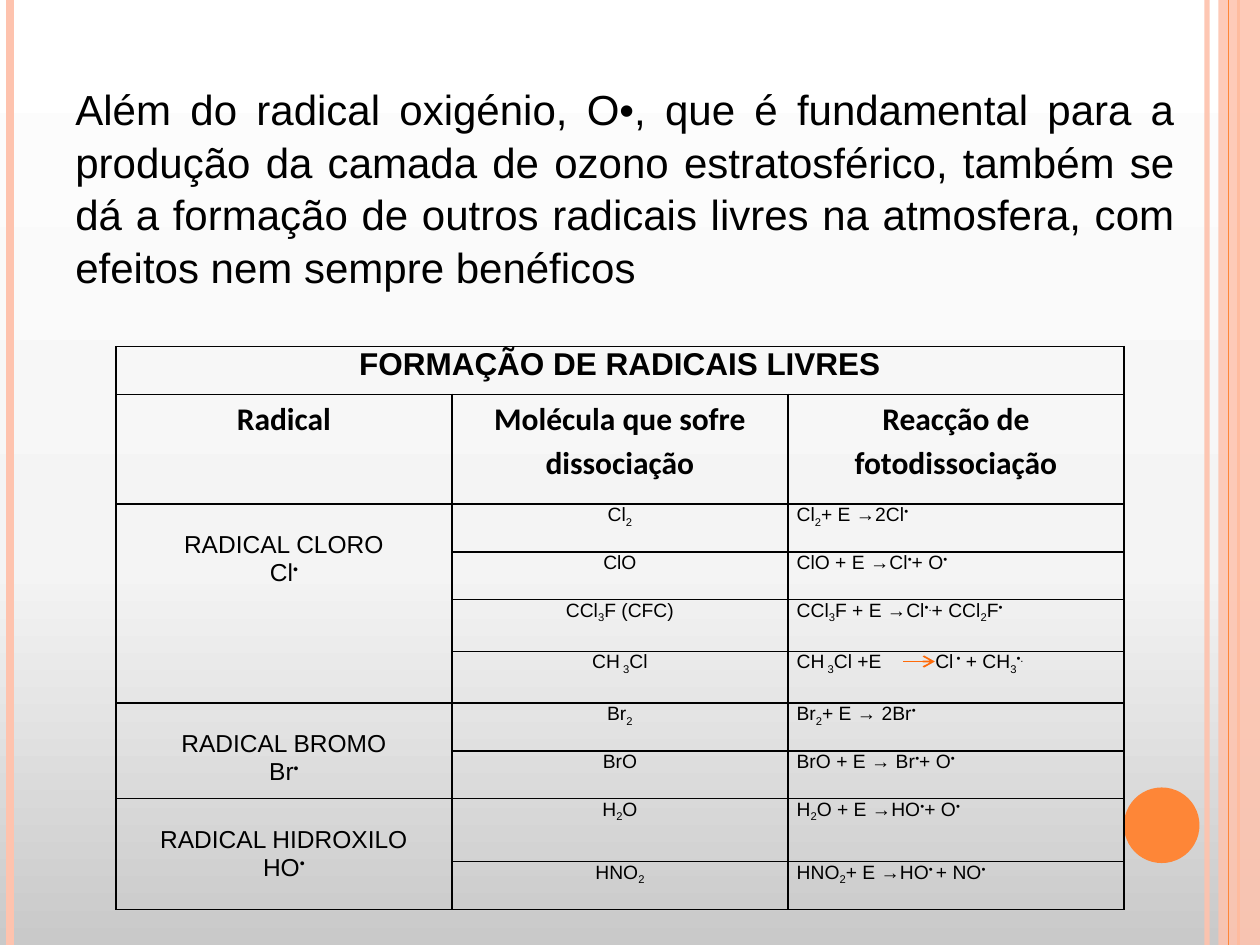
import copy
import dataclasses

import lxml.etree
import pptx
import pptx.dml.color
import pptx.enum.shapes
import pptx.enum.text
import pptx.oxml
import pptx.oxml.ns
import pptx.util

Inches = pptx.util.Inches
Align = pptx.enum.text.PP_ALIGN
Shape = pptx.enum.shapes.MSO_SHAPE
qn = pptx.oxml.ns.qn


@dataclasses.dataclass(frozen=True)
class Theme:
    ink: str = "000000"
    accent: str = "FE8637"
    blush: str = "FEC3AE"
    arrow: str = "FF6B0A"
    backdrop: tuple = ((0, "C9C9C9"), (0.4, "F4F4F4"), (1, "FFFFFF"))
    font: str = "Arial"
    heading_font: str = "Calibri"
    intro_size: int = 24
    heading_size: int = 18
    label_size: int = 14
    formula_size: int = 11


INTRO = (
    "Além do radical oxigénio, O•, que é fundamental para a produção da camada de ozono "
    "estratosférico, também se dá a formação de outros radicais livres na atmosfera, "
    "com efeitos nem sempre benéficos"
)
TITLE = "FORMAÇÃO DE RADICAIS LIVRES"
HEADINGS = ("Radical", "Molécula que sofre dissociação", "Reacção de fotodissociação")
RADICALS = (
    (("RADICAL CLORO", "Cl|^•"), (
        ("Cl|_2", "Cl|_2|+ E →2Cl|^•"),
        ("ClO", "ClO + E →Cl|^•|+ O|^•"),
        ("CCl|_3|F (CFC)", "CCl|_3|F + E →Cl|^•.|+ CCl|_2|F|^•"),
        ("CH|_ 3|Cl", "CH|_ 3|Cl +E\tCl|^ •| + CH|_3|^•."),
    )),
    (("RADICAL BROMO", "Br|^•"), (
        ("Br|_2", "Br|_2|+ E → 2Br|^•"),
        ("BrO", "BrO + E → Br|^•|+ O|^•"),
    )),
    (("RADICAL HIDROXILO", "HO|^•"), (
        ("H|_2|O", "H|_2|O + E →HO|^•|+ O|^•"),
        ("HNO|_2", "HNO|_2|+ E →HO|^• |+ NO|^•"),
    )),
)
ROW_HEIGHTS = (0.38, 0.87, 0.38, 0.38, 0.41, 0.41, 0.38, 0.38, 0.5, 0.38)
BASELINES = {"_": "-25000", "^": "30000"}


class SlideBuilder:
    """Draws styled elements on the current page."""

    def __init__(self, page, theme):
        self.page = page
        self.theme = theme

    def apply(self, target, values):
        for name, value in values.items():
            setattr(target, name, value)

    def rgb(self, colour):
        return pptx.dml.color.RGBColor.from_string(colour)

    def fade(self, element, percent):
        colour = element.find(".//" + qn("a:srgbClr"))
        lxml.etree.SubElement(colour, qn("a:alpha"), val=str(percent * 1000))

    def background(self):
        fill = self.page.background.fill
        fill.gradient()
        fill.gradient_angle = 90
        stops = self.page.element.find(".//" + qn("a:gsLst"))
        stops.append(copy.deepcopy(stops[0]))
        for stop, (position, colour) in zip(fill.gradient_stops, self.theme.backdrop):
            stop.position = position
            stop.color.rgb = self.rgb(colour)

    def line(self, start, end, colour, width, opacity=100, arrow=False):
        points = [Inches(value) for value in (*start, *end)]
        line = self.page.shapes.add_connector(pptx.enum.shapes.MSO_CONNECTOR.STRAIGHT, *points)
        line.line.color.rgb = self.rgb(colour)
        line.line.width = pptx.util.Pt(width)
        properties = line.element.spPr
        lxml.etree.SubElement(properties, qn("a:effectLst"))
        if opacity < 100:
            self.fade(properties, opacity)
        if arrow:
            lxml.etree.SubElement(properties.find(qn("a:ln")), qn("a:tailEnd"), type="arrow")

    def shape(self, kind, area, colour, opacity=100):
        shape = self.page.shapes.add_shape(kind, *map(Inches, area))
        shape.shadow.inherit = False
        shape.fill.solid()
        shape.fill.fore_color.rgb = self.rgb(colour)
        shape.line.fill.background()
        if opacity < 100:
            self.fade(shape.element.spPr, opacity)

    def paragraph(self, para, text, size, align, bold=False, font=None, spacing=None):
        self.apply(para, {"alignment": align, "line_spacing": spacing})
        for part in text.split("|"):
            baseline = BASELINES.get(part[0])
            span = para.add_run()
            span.text = part[1:] if baseline else part
            self.apply(span.font, {
                "name": font or self.theme.font, "size": pptx.util.Pt(size), "bold": bold,
            })
            span.font.color.rgb = self.rgb(self.theme.ink)
            if baseline:
                span.font._element.set("baseline", baseline)
        if "\t" in text:
            tabs = lxml.etree.SubElement(para._p.get_or_add_pPr(), qn("a:tabLst"))
            lxml.etree.SubElement(tabs, qn("a:tab"), pos=str(Inches(1.1)), algn="l")

    def text(self, area, text, size):
        box = self.page.shapes.add_textbox(*map(Inches, area))
        self.apply(box.text_frame, {"word_wrap": True, "margin_top": Inches(0.07)})
        self.paragraph(box.text_frame.paragraphs[0], text, size, Align.JUSTIFY, spacing=1.04)

    def cell(self, cell, lines, size, align=Align.CENTER, top=0, **style):
        cell.margin_top = Inches(top)
        frame = cell.text_frame
        for index, text in enumerate(lines):
            para = frame.add_paragraph() if index else frame.paragraphs[0]
            self.paragraph(para, text, size, align, **style)

    def border(self, cell):
        properties = cell._tc.get_or_add_tcPr()
        for side in ("lnL", "lnR", "lnT", "lnB"):
            edge = lxml.etree.SubElement(properties, qn("a:" + side), w=str(pptx.util.Pt(1)))
            fill = lxml.etree.SubElement(edge, qn("a:solidFill"))
            lxml.etree.SubElement(fill, qn("a:srgbClr"), val=self.theme.ink)

    def table(self, area):
        theme = self.theme
        size = (len(ROW_HEIGHTS), len(HEADINGS))
        table = self.page.shapes.add_table(*size, *map(Inches, area)).table
        self.apply(table, {"first_row": False, "horz_banding": False})
        for row, height in zip(table.rows, ROW_HEIGHTS):
            row.height = Inches(height)
        margins = {"margin_left": Inches(0.07), "margin_right": Inches(0.07),
                   "margin_top": 0, "margin_bottom": 0}
        for cell in table.iter_cells():
            self.apply(cell, margins)
            self.border(cell)
            cell.fill.background()
        table.cell(0, 0).merge(table.cell(0, len(HEADINGS) - 1))
        self.cell(table.cell(0, 0), [TITLE], theme.heading_size, bold=True)
        for column, heading in enumerate(HEADINGS):
            self.cell(table.cell(1, column), [heading], theme.heading_size,
                      bold=True, font=theme.heading_font, spacing=1.15)
        row = 2
        for label, reactions in RADICALS:
            table.cell(row, 0).merge(table.cell(row + len(reactions) - 1, 0))
            self.cell(table.cell(row, 0), label, theme.label_size, top=0.22)
            for molecule, reaction in reactions:
                self.cell(table.cell(row, 1), [molecule], theme.formula_size)
                self.cell(table.cell(row, 2), [reaction], theme.formula_size, Align.LEFT)
                row += 1


def main():
    deck = pptx.Presentation()
    deck.slide_width, deck.slide_height = Inches(10), Inches(7.5)
    theme = Theme()
    builder = SlideBuilder(deck.slides.add_slide(deck.slide_layouts[6]), theme)
    builder.background()
    for x, colour, width, opacity in (
        (9.58, theme.blush, 3, 93), (0.08, theme.blush, 4.5, 100), (9.83, theme.accent, 1.5, 100),
    ):
        builder.line((x, 0), (x, 7.5), colour, width, opacity)
    builder.shape(Shape.RECTANGLE, (9.67, 0, 0.33, 7.5), theme.blush, 87)
    builder.line((9.75, 0), (9.75, 7.5), theme.accent, 0.75)
    builder.shape(Shape.OVAL, (8.92, 6.25, 0.6, 0.6), theme.accent)
    builder.text((0.5, 0.58, 8.92, 1.72), INTRO, theme.intro_size)
    builder.table((0.92, 2.75, 8, sum(ROW_HEIGHTS)))
    builder.line((7.17, 5.25), (7.42, 5.25), theme.arrow, 1, arrow=True)
    deck.save("out.pptx")


if __name__ == "__main__":
    main()
